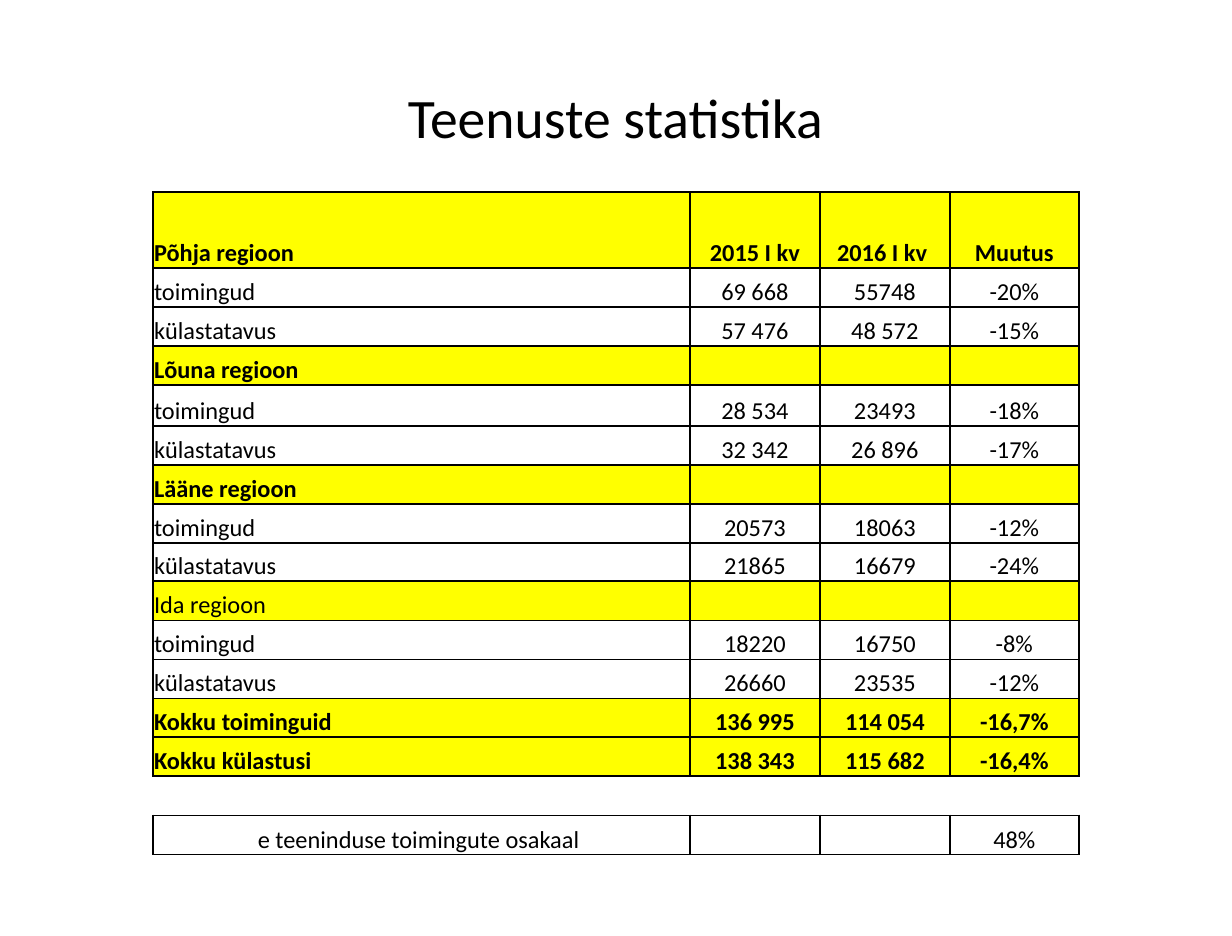
from lxml import etree
from pptx import Presentation
from pptx.dml.color import RGBColor
from pptx.enum.text import MSO_ANCHOR, PP_ALIGN
from pptx.oxml.ns import qn
from pptx.util import Cm, Pt

LEFT, CENTER = PP_ALIGN.LEFT, PP_ALIGN.CENTER
MIDDLE, BOTTOM = MSO_ANCHOR.MIDDLE, MSO_ANCHOR.BOTTOM

# Content: row style, then the four cells
TITLE = "Teenuste statistika"
ROWS = [
    ("strong", "Põhja regioon", "2015 I kv", "2016 I kv ", "Muutus"),
    ("plain", "toimingud", "69 668", "55748", "-20%"),
    ("plain", "külastatavus", "57 476", "48 572", "-15%"),
    ("strong", "Lõuna regioon", "", "", ""),
    ("plain", "toimingud", "28 534", "23493", "-18%"),
    ("plain", "külastatavus", "32 342", "26 896", "-17%"),
    ("strong", "Lääne regioon", "", "", ""),
    ("plain", "toimingud", "20573", "18063", "-12%"),
    ("plain", "külastatavus", "21865", "16679", "-24%"),
    ("light", "Ida regioon", "", "", ""),
    ("plain", "toimingud", "18220", "16750", "-8%"),
    ("plain", "külastatavus", "26660", "23535", "-12%"),
    ("strong", "Kokku toiminguid", "136 995", "114 054", "-16,7%"),
    ("strong", "Kokku külastusi", "138 343", "115 682", "-16,4%"),
    ("gap", "", "", "", ""),
    ("share", "e teeninduse toimingute osakaal ", "", "", "48%"),
]

# Format values
FONT, BLACK, YELLOW = "Calibri", "000000", "FFFF00"
ROW_STYLES = {  # fill, bold, alignment of the first column, side borders
    "strong": (YELLOW, True, LEFT, True),
    "light": (YELLOW, False, LEFT, True),
    "plain": (None, False, LEFT, True),
    "gap": (None, False, LEFT, False),
    "share": (None, False, CENTER, True),
}
CELL_FORMAT = {"vertical_anchor": BOTTOM, "margin_bottom": 0}

# Geometry in px, on a slide of 25 by 19 cm that is 1232 px wide
SLIDE_SIZE = {"slide_width": Cm(25), "slide_height": Cm(19)}
EMU_PER_PX = Cm(25) / 1232
TITLE_BOX = (61, 38, 1109, 156)
TABLE_ORIGIN = (153, 192)
COLUMN_WIDTHS = [537, 130, 130, 129]
ROW_HEIGHT = 39
SPECIAL_HEIGHTS = {0: 76, 4: 41, 8: 38, 14: 37}
CELL_INSET = 1


def px(length):
    return round(length * EMU_PER_PX)


def color(value):
    return RGBColor.from_string(value)


def set_attributes(target, values):
    for name, value in values.items():
        setattr(target, name, value)


def format_font(font, size, bold=False):
    set_attributes(font, {"name": FONT, "size": Pt(size), "bold": bold})
    font.color.rgb = color(BLACK)


def add_borders(cell, sides):
    properties = cell._tc.get_or_add_tcPr()
    for side in "LRTB":
        line = etree.SubElement(properties, qn(f"a:ln{side}"), w=str(Pt(1)))
        if side in sides:
            fill = etree.SubElement(line, qn("a:solidFill"))
            etree.SubElement(fill, qn("a:srgbClr"), val=BLACK)
        else:
            etree.SubElement(line, qn("a:noFill"))


def fill_cell(cell, text, fill, bold, alignment, sides):
    add_borders(cell, sides)
    if fill:
        cell.fill.solid()
        cell.fill.fore_color.rgb = color(fill)
    else:
        cell.fill.background()
    set_attributes(cell, CELL_FORMAT)
    for side in ("left", "right", "top"):
        setattr(cell, f"margin_{side}", px(CELL_INSET))
    paragraph = cell.text_frame.paragraphs[0]
    set_attributes(paragraph, {"alignment": alignment, "line_spacing": Pt(15)})
    if text:
        run = paragraph.add_run()
        run.text = text
        format_font(run.font, 14, bold)


def add_title(slide):
    title = slide.shapes.title
    for name, length in zip(("left", "top", "width", "height"), TITLE_BOX):
        setattr(title, name, px(length))
    title.text_frame.text = TITLE
    title.text_frame.vertical_anchor = MIDDLE
    paragraph = title.text_frame.paragraphs[0]
    paragraph.alignment = CENTER
    format_font(paragraph.runs[0].font, 32)


def add_statistics(slide):
    heights = [SPECIAL_HEIGHTS.get(index, ROW_HEIGHT) for index in range(len(ROWS))]
    box = (*TABLE_ORIGIN, sum(COLUMN_WIDTHS), sum(heights))
    table = slide.shapes.add_table(
        len(ROWS), len(COLUMN_WIDTHS), *map(px, box)).table
    set_attributes(table, {"first_row": False, "horz_banding": False})
    for column, width in zip(table.columns, COLUMN_WIDTHS):
        column.width = px(width)
    for row, height, (style, *texts) in zip(table.rows, heights, ROWS):
        row.height = px(height)
        fill, bold, first_alignment, has_sides = ROW_STYLES[style]
        sides = "LRTB" if has_sides else "TB"
        for index, (cell, text) in enumerate(zip(row.cells, texts)):
            alignment = CENTER if index else first_alignment
            fill_cell(cell, text, fill, bold, alignment, sides)


def main():
    presentation = Presentation()
    set_attributes(presentation, SLIDE_SIZE)
    slide = presentation.slides.add_slide(presentation.slide_layouts[5])
    add_title(slide)
    add_statistics(slide)
    presentation.save("out.pptx")


if __name__ == "__main__":
    main()
